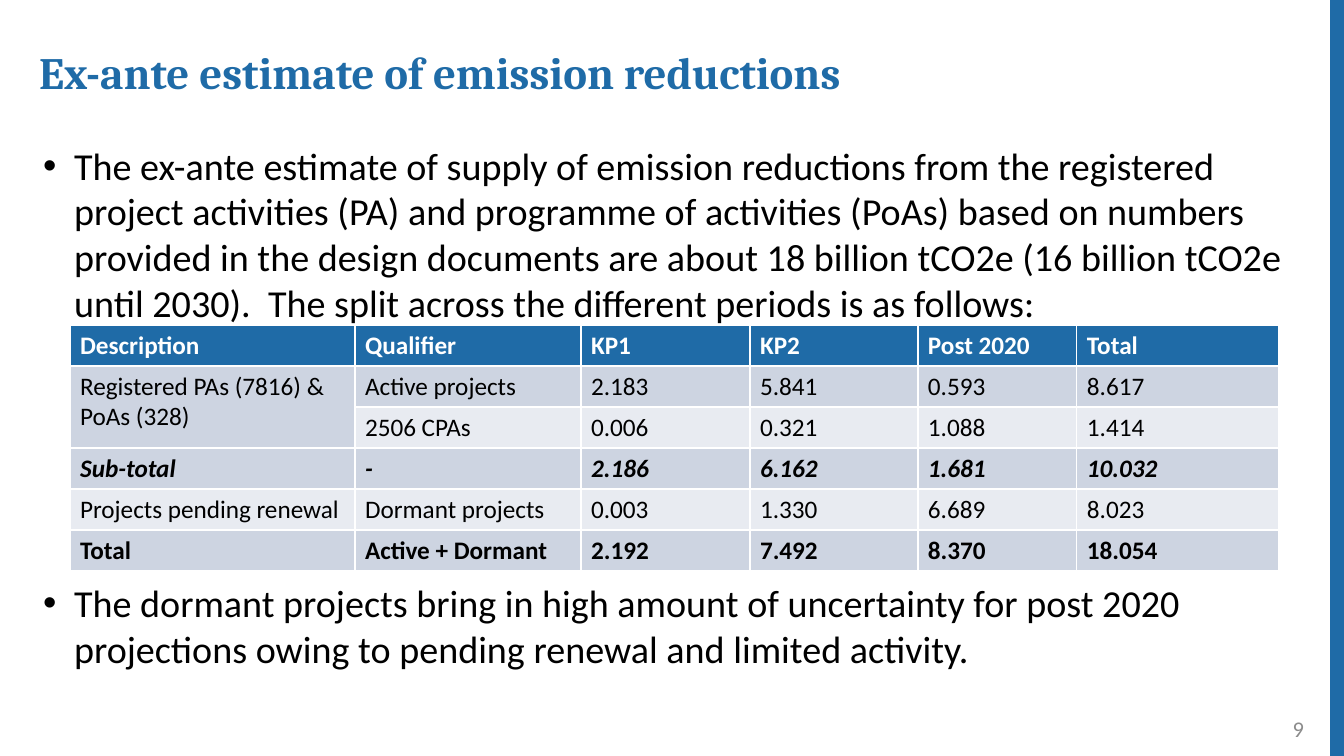
"""Build the slide on the ex-ante estimate of emission reductions."""
from lxml import etree
from pptx import Presentation
from pptx.dml.color import RGBColor
from pptx.enum.shapes import MSO_CONNECTOR
from pptx.enum.text import MSO_ANCHOR, MSO_AUTO_SIZE, PP_ALIGN
from pptx.oxml.ns import qn
from pptx.util import Emu, Pt

STRAIGHT = MSO_CONNECTOR.STRAIGHT
TOP, MIDDLE = MSO_ANCHOR.TOP, MSO_ANCHOR.MIDDLE
LEFT, RIGHT = PP_ALIGN.LEFT, PP_ALIGN.RIGHT
NO_AUTOFIT = MSO_AUTO_SIZE.NONE
EMU_PER_PX = 12192000 / 1344
BLUE, BLACK, WHITE, GREY = "1F6BA7", "000000", "FFFFFF", "8C8C8C"
BANDS = ["CDD4E1", "E8EBF1"]


def px(length):
    return Emu(round(length * EMU_PER_PX))


def format_font(font, color, **values):
    for name, value in values.items():
        setattr(font, name, value)
    font.color.rgb = RGBColor.from_string(color)


presentation = Presentation()
presentation.slide_width, presentation.slide_height = px(1344), px(756)
slide = presentation.slides.add_slide(presentation.slide_layouts[1])
title, body = slide.placeholders

edge = slide.shapes.add_connector(STRAIGHT, px(1338), 0, px(1338), px(756))
edge.line.color.rgb = RGBColor.from_string(BLUE)
edge.line.width = Pt(12)
etree.SubElement(edge._element.spPr, qn("a:effectLst"))

number = slide.shapes.add_textbox(0, 0, 0, 0)
boxes = [
    (title, (29, 46, 1206, 58), TOP),
    (body, (33, 137, 1280, 577), TOP),
    (number, (1012, 709, 302, 40), MIDDLE),
]
for shape, bounds, anchor in boxes:
    shape.left, shape.top, shape.width, shape.height = map(px, bounds)
    frame_format = {"word_wrap": True, "auto_size": NO_AUTOFIT, "vertical_anchor": anchor}
    for name, value in frame_format.items():
        setattr(shape.text_frame, name, value)

title.text_frame.text = "Ex-ante estimate of emission reductions"
heading = title.text_frame.paragraphs[0]
heading.alignment = LEFT
heading.line_spacing = 0.9
format_font(heading.font, BLUE, name="Cambria", size=Pt(32), bold=True)

number.text_frame.text = "9"
page = number.text_frame.paragraphs[0]
page.alignment = RIGHT
format_font(page.font, GREY, name="Calibri", size=Pt(16))

bullets = [
    "The ex-ante estimate of supply of emission reductions from the registered "
    "project activities (PA) and programme of activities (PoAs) based on numbers "
    "provided in the design documents are about 18 billion tCO2e (16 billion tCO2e "
    "until 2030).  The split across the different periods is as follows:",
    "The dormant projects bring in high amount of uncertainty for post 2020 "
    "projections owing to pending renewal and limited activity.",
]
body.text_frame.text = "\n".join(bullets)
for paragraph, space_before in zip(body.text_frame.paragraphs, [0, 182]):
    properties = paragraph._p.get_or_add_pPr()
    properties.set("marL", str(px(31)))
    properties.set("indent", str(px(-31)))
    etree.SubElement(properties, qn("a:buFont"), typeface="Arial")
    etree.SubElement(properties, qn("a:buChar"), char="•")
    paragraph.space_before = Pt(space_before)
    format_font(paragraph.font, BLACK, name="Calibri", size=Pt(27.2))

rows = [
    ["Description", "Qualifier", "KP1", "KP2", "Post 2020", "Total"],
    ["Registered PAs (7816) & PoAs (328)", "Active projects", "2.183", "5.841", "0.593", "8.617"],
    ["", "2506 CPAs", "0.006", "0.321", "1.088", "1.414"],
    ["Sub-total", "-", "2.186", "6.162", "1.681", "10.032"],
    ["Projects pending renewal", "Dormant projects", "0.003", "1.330", "6.689", "8.023"],
    ["Total", "Active + Dormant", "2.192", "7.492", "8.370", "18.054"],
]
column_widths = [285, 226, 169, 168, 159, 202]
table = slide.shapes.add_table(
    len(rows), len(column_widths), px(70), px(325), px(sum(column_widths)), px(41 * len(rows))
).table
for column, width in zip(table.columns, column_widths):
    column.width = px(width)
for row_index, row in enumerate(rows):
    table.rows[row_index].height = px(41)
    is_header = row_index == 0
    fill_color = BLUE if is_header else BANDS[(row_index - 1) % 2]
    for column_index, text in enumerate(row):
        cell = table.cell(row_index, column_index)
        cell.text = text
        cell.fill.solid()
        cell.fill.fore_color.rgb = RGBColor.from_string(fill_color)
        format_font(
            cell.text_frame.paragraphs[0].font,
            WHITE if is_header else BLACK,
            name="Calibri",
            size=Pt(18),
            bold=is_header or row[0] in ("Sub-total", "Total"),
            italic=row[0] == "Sub-total",
        )
table.cell(1, 0).merge(table.cell(2, 0))

presentation.save("out.pptx")
